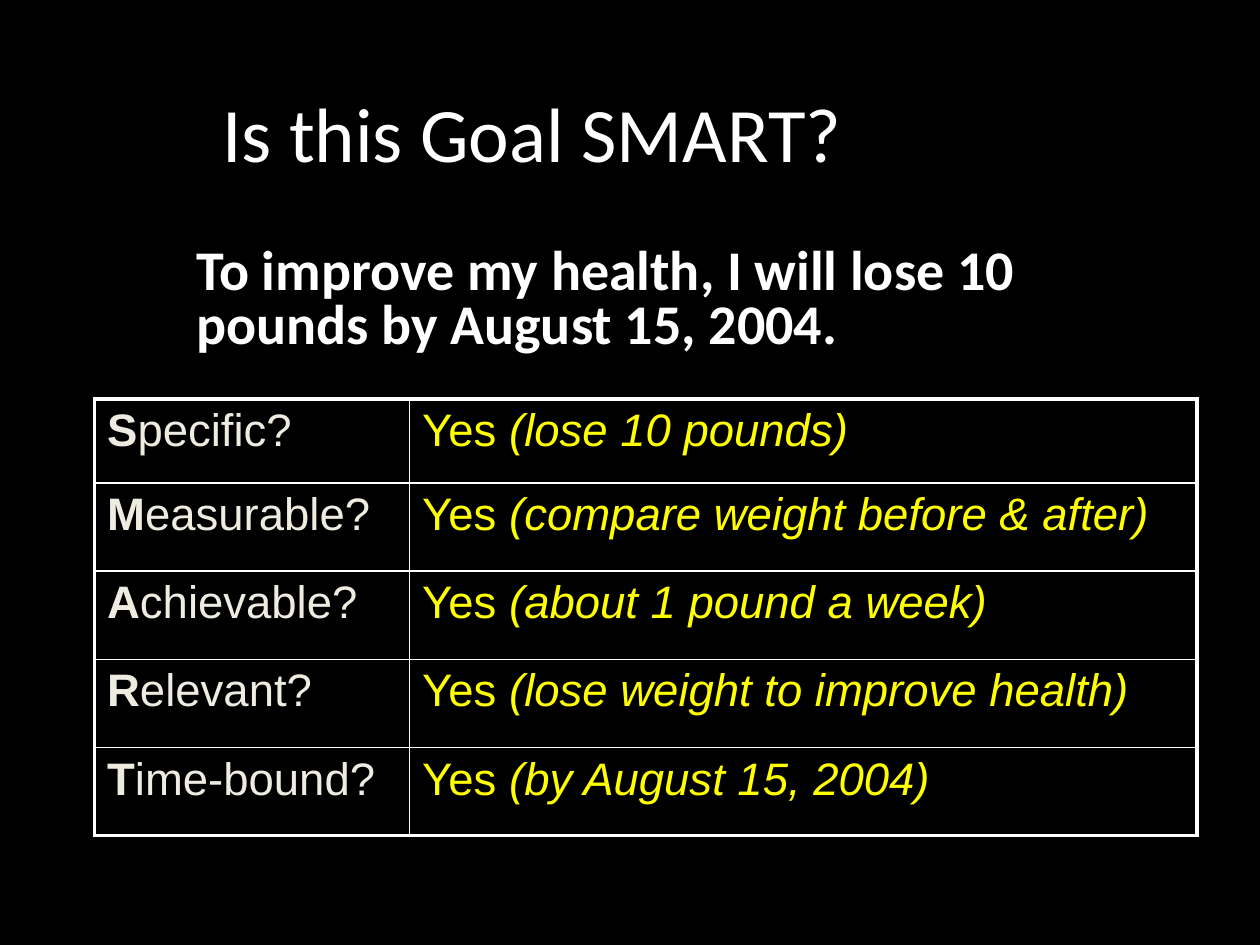
"""Build a slide that checks a weight goal against the SMART criteria."""
from dataclasses import dataclass

from lxml import etree
from pptx import Presentation
from pptx.dml.color import RGBColor
from pptx.enum import text
from pptx.oxml import ns
from pptx.util import Pt


@dataclass(frozen=True)
class Theme:
    back: str = "000000"
    white: str = "FFFFFF"
    cream: str = "EEECE1"
    yellow: str = "FFFF00"
    head_font: str = "Calibri"
    cell_font: str = "Arial"
    title: int = 44
    goal: int = 32
    cell: int = 26
    thick: float = 2.25
    thin: float = 1


T = Theme()


def add_run(p, words, *, size, color, font, bold=False, italic=False):
    r = p.add_run()
    r.text = words
    r.font.size, r.font.name = Pt(size), font
    r.font.bold, r.font.italic = bold, italic
    r.font.color.rgb = RGBColor.from_string(color)


def add_border(cell, side, width):
    ln = etree.SubElement(cell._tc.get_or_add_tcPr(), ns.qn(f"a:ln{side}"), w=str(Pt(width)))
    fill = etree.SubElement(ln, ns.qn("a:solidFill"))
    etree.SubElement(fill, ns.qn("a:srgbClr"), val=T.white)


prs = Presentation()
prs.slide_width, prs.slide_height = Pt(720), Pt(540)
s = prs.slides.add_slide(prs.slide_layouts[6])
s.background.fill.solid()
s.background.fill.fore_color.rgb = RGBColor.from_string(T.back)

tf = s.shapes.add_textbox(Pt(120), Pt(15), Pt(552), Pt(120)).text_frame
tf.word_wrap = True
tf.vertical_anchor = text.MSO_ANCHOR.MIDDLE
add_run(tf.paragraphs[0], "Is this Goal SMART?", size=T.title, color=T.white, font=T.head_font)

tf = s.shapes.add_textbox(Pt(78), Pt(138), Pt(588), Pt(84)).text_frame
tf.word_wrap = True
p = tf.paragraphs[0]
p.line_spacing = 0.8
p._p.get_or_add_pPr().set("marL", str(Pt(27)))
add_run(p, "To improve my health, I will lose 10 pounds by August 15, 2004.",
        size=T.goal, color=T.white, font=T.head_font, bold=True)

criteria = [
    ("Specific?", "lose 10 pounds"),
    ("Measurable?", "compare weight before & after"),
    ("Achievable?", "about 1 pound a week"),
    ("Relevant?", "lose weight to improve health"),
    ("Time-bound?", "by August 15, 2004"),
]
last = len(criteria) - 1
table = s.shapes.add_table(len(criteria), 2, Pt(54), Pt(228), Pt(630), Pt(249.6)).table
table.first_row = table.horz_banding = False
table.columns[0].width, table.columns[1].width = Pt(180), Pt(450)

for i, (criterion, reason) in enumerate(criteria):
    table.rows[i].height = Pt(50.4 if i else 48)
    name, answer = table.cell(i, 0), table.cell(i, 1)
    p = name.text_frame.paragraphs[0]
    add_run(p, criterion[0], size=T.cell, color=T.cream, font=T.cell_font, bold=True)
    add_run(p, criterion[1:], size=T.cell, color=T.cream, font=T.cell_font)
    p = answer.text_frame.paragraphs[0]
    add_run(p, "Yes ", size=T.cell, color=T.yellow, font=T.cell_font)
    add_run(p, f"({reason})", size=T.cell, color=T.yellow, font=T.cell_font, italic=True)
    for j, cell in enumerate((name, answer)):
        outer = {"L": j == 0, "R": j == 1, "T": i == 0, "B": i == last}
        for side, on_edge in outer.items():
            add_border(cell, side, T.thick if on_edge else T.thin)
        cell.fill.background()

prs.save("out.pptx")
